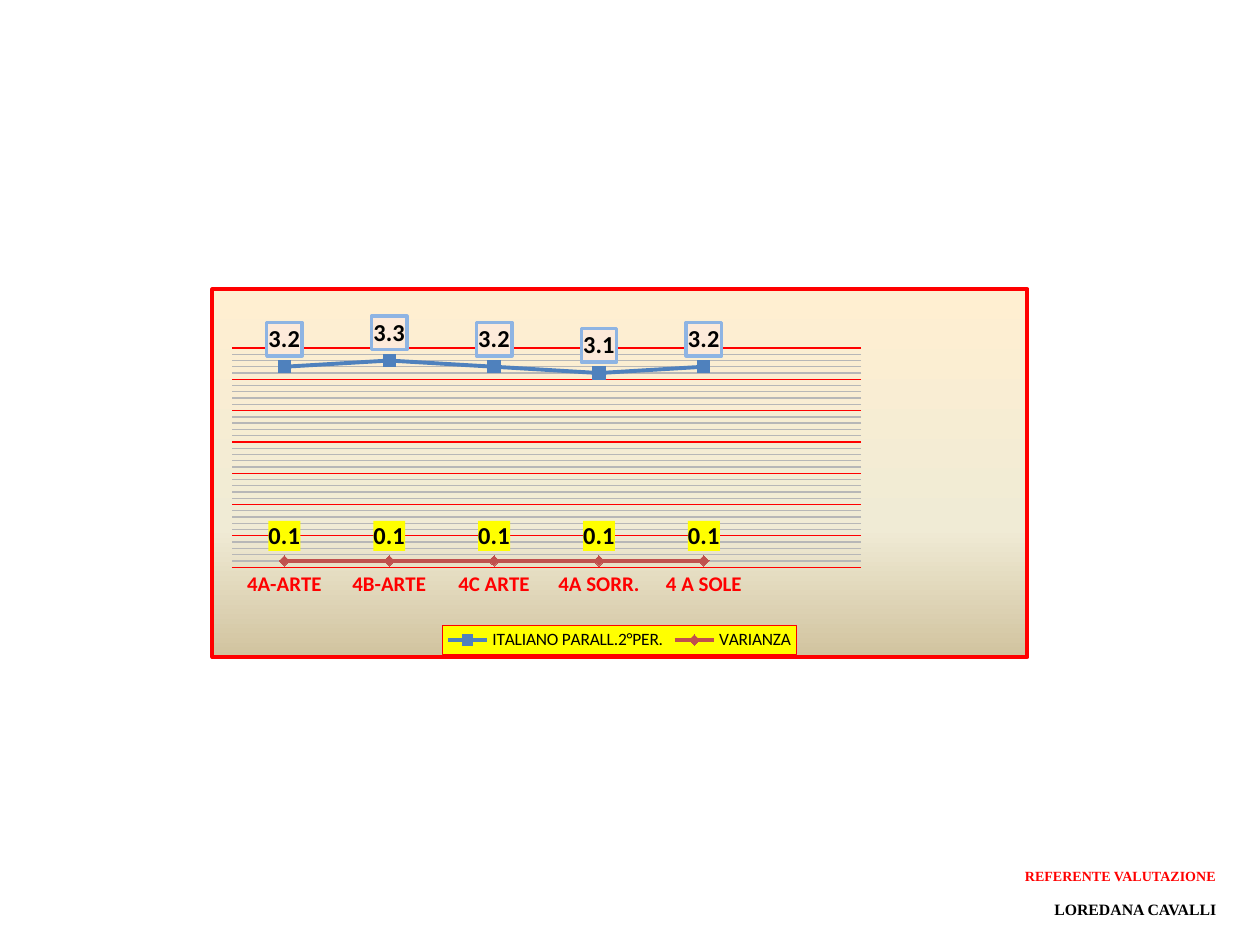
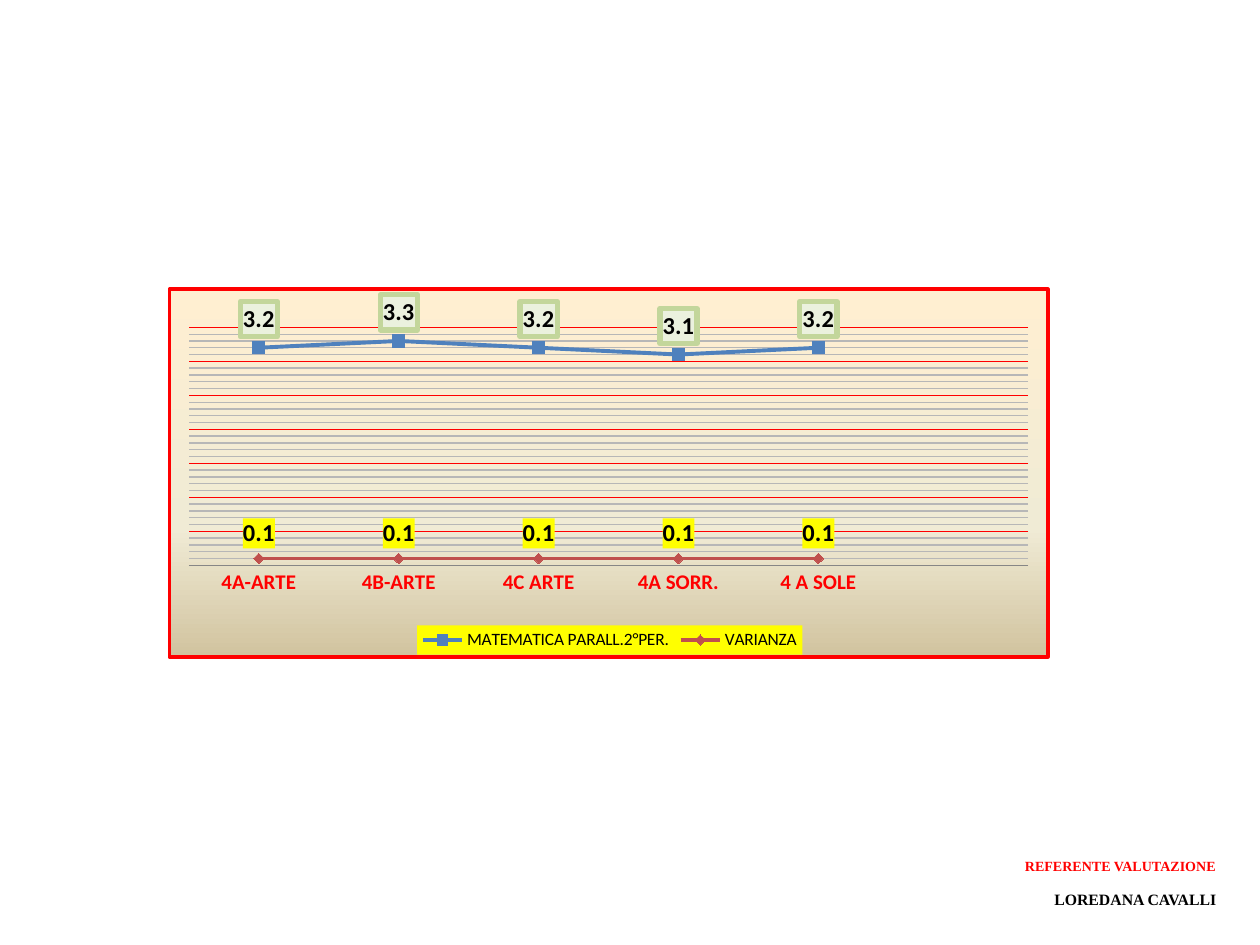
import pptx
import pptx.chart.data
import pptx.dml.color
import pptx.enum.chart
import pptx.enum.text
import pptx.oxml
import pptx.oxml.ns
import pptx.util

# Content
CLASSES = ["4A-ARTE", "4B-ARTE", "4C ARTE", "4A SORR.", "4 A SOLE", ""]
VARIANCE = ("VARIANZA", [0.1, 0.1, 0.1, 0.1, 0.1, None])
SIGNATURE = [("REFERENTE VALUTAZIONE", 8, "FF0000"), ("LOREDANA CAVALLI", 9, "000000")]
PAGES = [
    {
        "subject": ("ITALIANO PARALL.2°PER.", [3.2, 3.3, 3.2, 3.1, 3.2, None]),
        "chart_width": 6.5, "chart_left": 1.67, "plot": (0.024, 0.16, 0.772, 0.596),
        "axis_line": "FF0000", "legend_line": "FF0000",
        "label_fill": "FDEADA", "label_line": "8EB4E3", "label_weight": 2,
        "signature_top": 6.83,
    },
    {
        "subject": ("MATEMATICA PARALL.2°PER.", [3.2, 3.3, 3.2, 3.1, 3.2, None]),
        "chart_width": 7, "chart_left": 1.33, "plot": (0.022, 0.104, 0.956, 0.647),
        "axis_line": "868686", "legend_line": None,
        "label_fill": "EBF1DE", "label_line": "C3D69B", "label_weight": 3,
        "signature_top": 6.75,
    },
]

# Shared style
RED, YELLOW, BLACK, GRAY = "FF0000", "FFFF00", "000000", "B7B7B7"
CHART_TOP, CHART_HEIGHT = 2.28, 2.95
GRADIENT = [(0, "FFEFD1"), (65, "F0EBD5"), (100, "D1C39F")]
MARKERS = pptx.enum.chart.XL_MARKER_STYLE
SERIES_STYLES = [("4F81BD", MARKERS.SQUARE, 7), ("C0504D", MARKERS.DIAMOND, 6)]
LEGEND_CORNER = (0.282, 0.914)


def color(value):
    return pptx.dml.color.RGBColor.from_string(value)


def set_font(font, size, value=BLACK, bold=False, name="Calibri"):
    font.size = pptx.util.Pt(size)
    font.color.rgb = color(value)
    font.bold = bold
    font.name = name


def set_line(line, value, weight):
    line.color.rgb = color(value)
    line.width = pptx.util.Pt(weight)


def solid(value):
    return f'<a:solidFill><a:srgbClr val="{value}"/></a:solidFill>'


def gradient(stops):
    marks = "".join(
        f'<a:gs pos="{share * 1000}"><a:srgbClr val="{value}"/></a:gs>'
        for share, value in stops)
    return f'<a:gradFill><a:gsLst>{marks}</a:gsLst><a:lin ang="5400000" scaled="0"/></a:gradFill>'


def part_style(fill="", line=None, weight=0.75):
    """Make the fill and border of a chart part."""
    border = (f'<a:ln w="{int(weight * 12700)}">{solid(line)}</a:ln>' if line
              else "<a:ln><a:noFill/></a:ln>")
    names = pptx.oxml.ns.nsdecls("c", "a")
    return pptx.oxml.parse_xml(f"<c:spPr {names}>{fill}{border}</c:spPr>")


def frame(element, *style):
    """Fill and border a chart part whose font is already set."""
    element.find(pptx.oxml.ns.qn("c:txPr")).addprevious(part_style(*style))


def place(element, index, shares, inner=False):
    """Set a manual layout in shares of the chart: x, y and perhaps w, h."""
    for old in element.findall(pptx.oxml.ns.qn("c:layout")):
        element.remove(old)
    target = '<c:layoutTarget val="inner"/>' if inner else ""
    sizes = "".join(f'<c:{key} val="{share}"/>' for key, share in zip("xywh", shares))
    element.insert(index, pptx.oxml.parse_xml(
        f'<c:layout {pptx.oxml.ns.nsdecls("c")}><c:manualLayout>{target}'
        f'<c:xMode val="edge"/><c:yMode val="edge"/>{sizes}</c:manualLayout></c:layout>'))


def style_axes(chart, axis_line):
    classes, values = chart.category_axis, chart.value_axis
    classes.major_tick_mark = pptx.enum.chart.XL_TICK_MARK.NONE
    set_font(classes.tick_labels.font, 12, RED, bold=True)
    set_line(classes.format.line, axis_line, 0.75)
    values.visible = False
    values.minimum_scale, values.maximum_scale = 0, 3.5
    values.major_unit, values.minor_unit = 0.5, 0.1
    values.has_major_gridlines = values.has_minor_gridlines = True
    set_line(values.major_gridlines.format.line, RED, 0.75)
    minor = chart._chartSpace.find(".//" + pptx.oxml.ns.qn("c:minorGridlines"))
    minor.append(part_style(line=GRAY))


def style_series(series, style, label_frame):
    value, marker, size = style
    series.smooth = False
    set_line(series.format.line, value, 2.25)
    series.marker.style, series.marker.size = marker, size
    series.marker.format.fill.solid()
    series.marker.format.fill.fore_color.rgb = color(value)
    set_line(series.marker.format.line, value, 0.75)
    labels = series.data_labels
    labels.show_value = True
    labels.position = pptx.enum.chart.XL_LABEL_POSITION.ABOVE
    set_font(labels.font, 14, bold=True)
    frame(labels._element, *label_frame)


def add_results_chart(page, content):
    data = pptx.chart.data.CategoryChartData()
    data.categories = CLASSES
    for name, values in (content["subject"], VARIANCE):
        data.add_series(name, values)
    box = [pptx.util.Inches(length) for length in
           (content["chart_left"], CHART_TOP, content["chart_width"], CHART_HEIGHT)]
    chart = page.shapes.add_chart(
        pptx.enum.chart.XL_CHART_TYPE.LINE_MARKERS, *box, data).chart
    chart.has_title = False
    set_font(chart.font, 10)
    frame(chart._chartSpace, gradient(GRADIENT), RED, 2.25)
    plot_area = chart._chartSpace.find(".//" + pptx.oxml.ns.qn("c:plotArea"))
    place(plot_area, 0, content["plot"], inner=True)
    chart.plots[0].vary_by_categories = False
    style_axes(chart, content["axis_line"])

    label_frames = [
        (solid(content["label_fill"]), content["label_line"], content["label_weight"]),
        (solid(YELLOW),),
    ]
    for series, style, label_frame in zip(chart.plots[0].series, SERIES_STYLES, label_frames):
        style_series(series, style, label_frame)

    chart.has_legend = True
    legend = chart.legend
    legend.position = pptx.enum.chart.XL_LEGEND_POSITION.BOTTOM
    legend.include_in_layout = False
    set_font(legend.font, 10)
    frame(legend._element, solid(YELLOW), content["legend_line"])
    place(legend._element, 1, LEGEND_CORNER)


def add_text(paragraph, text, **font):
    span = paragraph.add_run()
    span.text = text
    set_font(span.font, **font)
    paragraph.alignment = pptx.enum.text.PP_ALIGN.RIGHT
    paragraph.line_spacing = 1.07
    paragraph.space_after = pptx.util.Pt(8)


def add_signature(page, top):
    box = page.shapes.add_textbox(
        *[pptx.util.Inches(length) for length in (4.75, top, 5, 0.52)])
    box.text_frame.word_wrap = True
    for index, (text, size, value) in enumerate(SIGNATURE):
        para = box.text_frame.add_paragraph() if index else box.text_frame.paragraphs[0]
        add_text(para, text, size=size, value=value, bold=True, name="Times New Roman")


def main():
    deck = pptx.Presentation()
    deck.slide_width, deck.slide_height = pptx.util.Inches(10), pptx.util.Inches(7.5)
    blank = deck.slide_layouts[6]
    for content in PAGES:
        page = deck.slides.add_slide(blank)
        add_results_chart(page, content)
        add_signature(page, content["signature_top"])
    deck.save("out.pptx")


if __name__ == "__main__":
    main()
